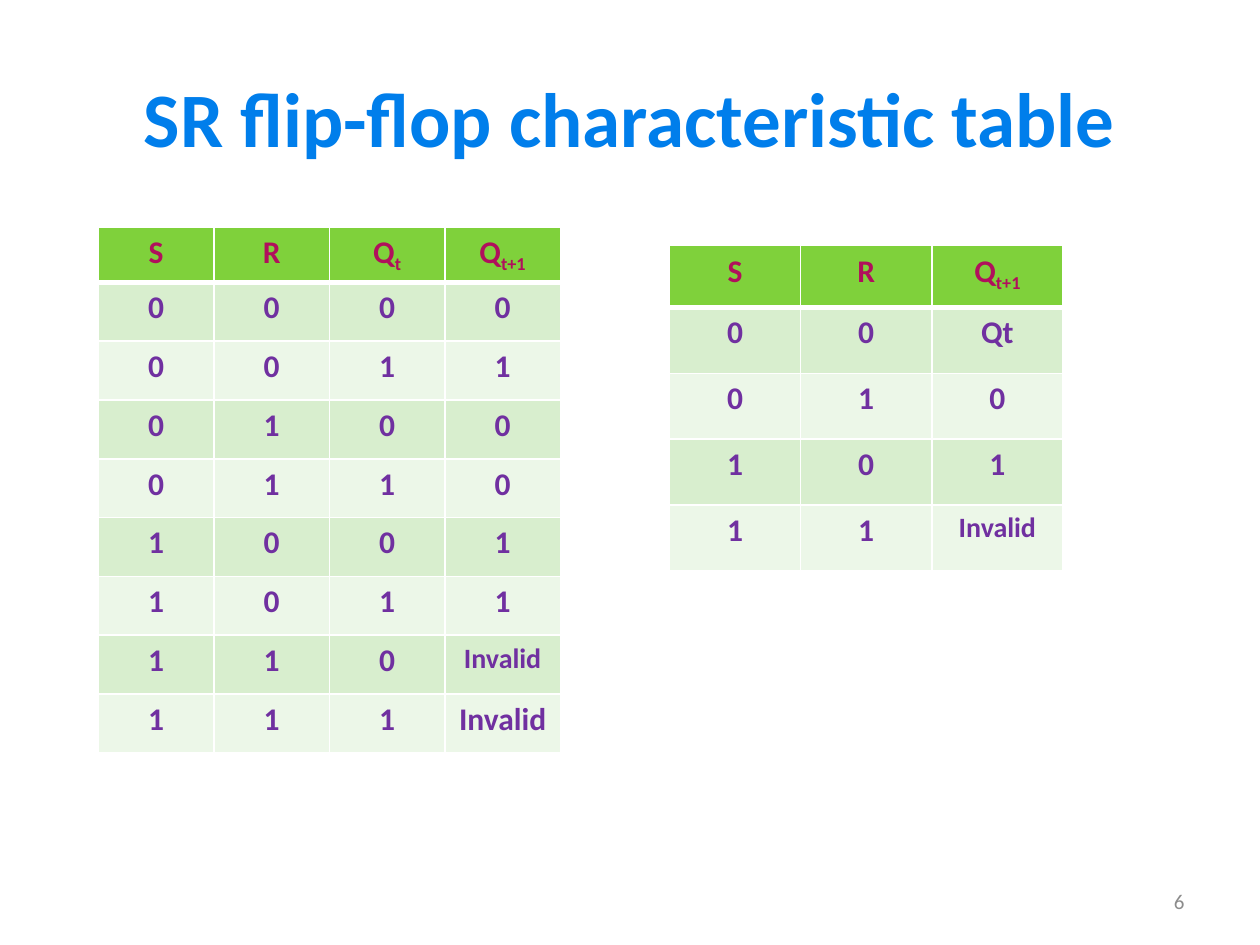
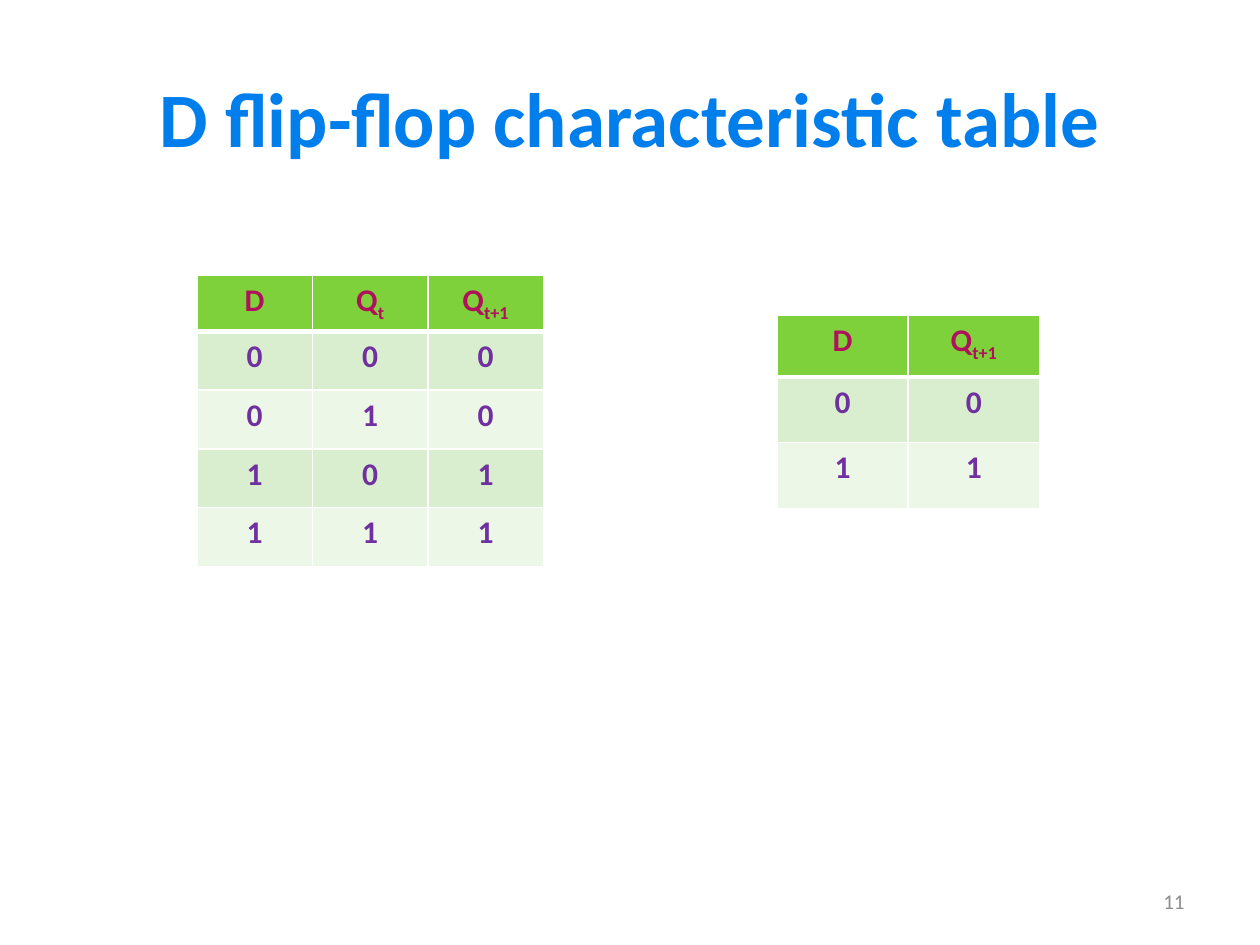
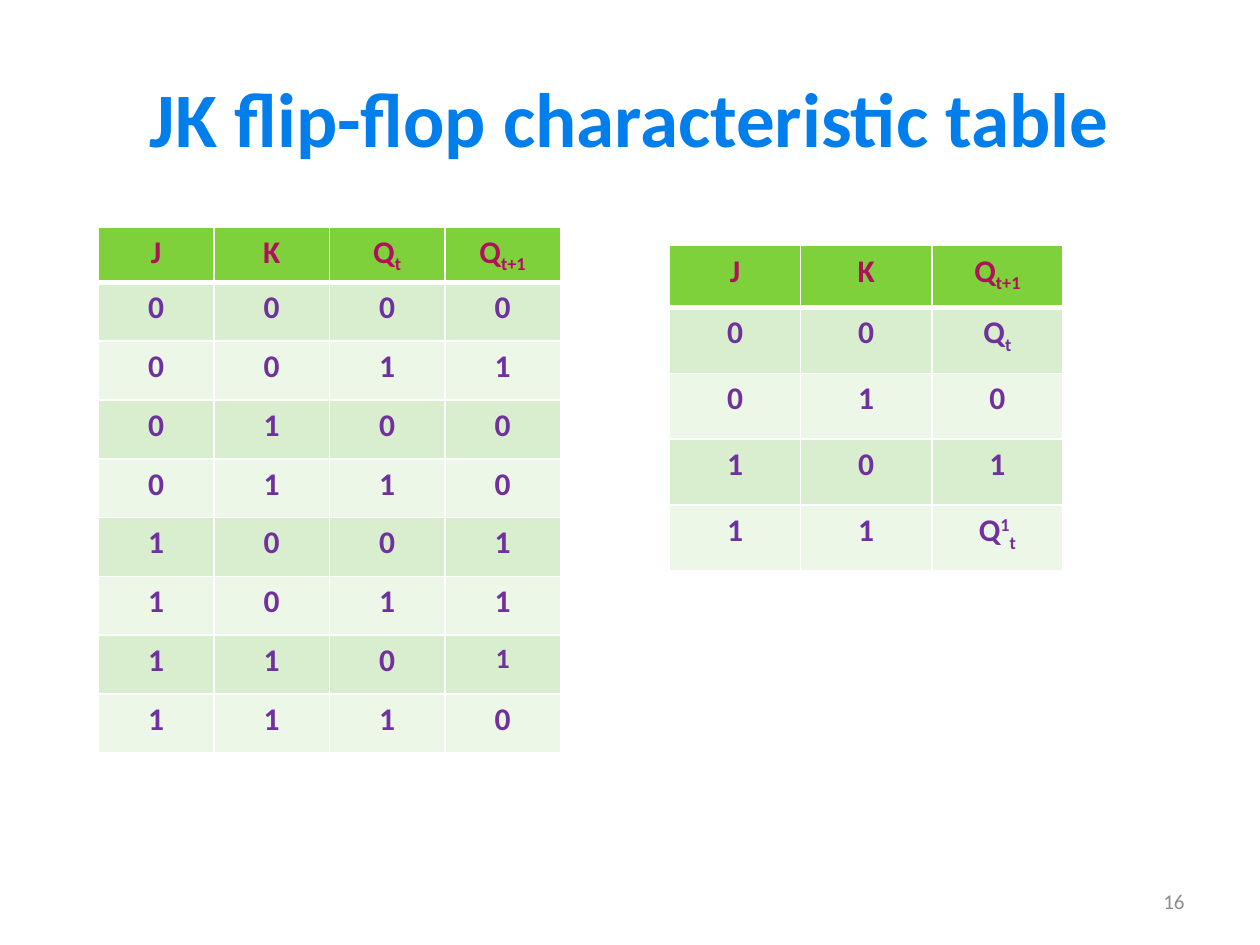
from itertools import product

from lxml.etree import SubElement
from pptx import Presentation
from pptx.dml.color import RGBColor
from pptx.enum.text import MSO_ANCHOR, PP_ALIGN
from pptx.oxml.ns import qn
from pptx.util import Pt

COLORS = {
    "title": "007EEB",
    "number": "8C8C8C",
    "header_text": "B0105C",
    "body_text": "7030A0",
    "header": "7FD13B",
    "odd_row": "D8EECE",
    "even_row": "ECF7E8",
    "border": "FFFFFF",
}
TITLE = {
    "box": (36, 21.6, 648, 90),
    "align": PP_ALIGN.CENTER,
    "color": "title",
    "font": {"size": Pt(44), "bold": True},
}
NUMBER = {
    "box": (516, 500.5, 168, 28.75),
    "align": PP_ALIGN.RIGHT,
    "color": "number",
    "font": {"size": Pt(12), "bold": False},
}
FULL_GRID = {"column": 66, "header": 24, "row": 33.6}
SHORT_GRID = {"column": 75, "header": 35.4, "row": 37.6}
BASELINES = {"_": "-25000", "^": "30000"}

FLIP_FLOPS = [
    {
        "title": "SR flip-flop characteristic table",
        "number": "6",
        "inputs": ["S", "R"],
        "full": {
            "at": (56.25, 129.6),
            "next": ["0", "1", "0", "0", "1", "1", "Invalid", "Invalid"],
            "small_row": 7,
        },
        "short": {
            "at": (382.5, 140.4),
            "next": ["Qt", "0", "1", "Invalid"],
            "small_row": 4,
        },
    },
    {
        "title": "D flip-flop characteristic table",
        "number": "11",
        "inputs": ["D"],
        "full": {"at": (112.5, 157.5), "next": ["0", "0", "1", "1"]},
        "short": {"at": (444, 180), "next": ["0", "1"]},
    },
    {
        "title": "JK flip-flop characteristic table",
        "number": "16",
        "inputs": ["J", "K"],
        "full": {
            "at": (56.25, 129.6),
            "next": ["0", "1", "0", "0", "1", "1", "1", "0"],
            "small_row": 7,
        },
        "short": {"at": (382.5, 140.4), "next": ["Q_t", "0", "1", "Q^1_t"]},
    },
]


def color(name):
    return RGBColor.from_string(COLORS[name])


def split_runs(text):
    runs = [["", None]]
    for character in text:
        if character in BASELINES:
            runs.append(["", BASELINES[character]])
        else:
            runs[-1][0] += character
    return runs


def write_text(paragraph, text, align, color_name, font):
    paragraph.alignment = align
    for run_text, baseline in split_runs(text):
        run = paragraph.add_run()
        run.text = run_text
        for name, value in {"name": "Calibri", **font}.items():
            setattr(run.font, name, value)
        run.font.color.rgb = color(color_name)
        if baseline:
            run._r.get_or_add_rPr().set("baseline", baseline)


def add_text(slide, text, style):
    box = slide.shapes.add_textbox(*map(Pt, style["box"]))
    box.text_frame.word_wrap = True
    box.text_frame.vertical_anchor = MSO_ANCHOR.MIDDLE
    write_text(box.text_frame.paragraphs[0], text, style["align"], style["color"], style["font"])


def set_borders(cell, row_index):
    widths = {
        "a:lnL": 1,
        "a:lnR": 1,
        "a:lnT": 3 if row_index == 1 else 1,
        "a:lnB": 3 if row_index == 0 else 1,
    }
    properties = cell._tc.get_or_add_tcPr()
    for position, (tag, width) in enumerate(widths.items()):
        line = SubElement(properties, qn(tag), w=str(Pt(width)))
        fill = SubElement(line, qn("a:solidFill"))
        SubElement(fill, qn("a:srgbClr"), val=COLORS["border"])
        properties.insert(position, line)


def format_cell(cell, text, row_index, size):
    is_header = row_index == 0
    band = "header" if is_header else "odd_row" if row_index % 2 else "even_row"
    cell.fill.solid()
    cell.fill.fore_color.rgb = color(band)
    set_borders(cell, row_index)
    write_text(
        cell.text_frame.paragraphs[0],
        text,
        PP_ALIGN.CENTER,
        "header_text" if is_header else "body_text",
        {"size": Pt(size), "bold": True},
    )


def add_truth_table(slide, inputs, details, grid):
    states = product("01", repeat=len(inputs))
    rows = [[*inputs, "Q_t+1"]]
    rows += [[*state, following] for state, following in zip(states, details["next"])]
    column_count = len(rows[0])
    width = column_count * grid["column"]
    height = grid["header"] + len(details["next"]) * grid["row"]
    frame = slide.shapes.add_table(
        len(rows), column_count, *map(Pt, (*details["at"], width, height))
    )
    table = frame.table
    for column in table.columns:
        column.width = Pt(grid["column"])
    for row_index, values in enumerate(rows):
        table.rows[row_index].height = Pt(grid["row"] if row_index else grid["header"])
        for column_index, text in enumerate(values):
            is_small = row_index == details.get("small_row") and column_index == len(inputs)
            format_cell(
                table.cell(row_index, column_index), text, row_index, 16 if is_small else 18
            )


def add_flip_flop_slide(presentation, flip_flop):
    slide = presentation.slides.add_slide(presentation.slide_layouts[6])
    inputs = flip_flop["inputs"]
    add_text(slide, flip_flop["title"], TITLE)
    add_truth_table(slide, [*inputs, "Q_t"], flip_flop["full"], FULL_GRID)
    add_text(slide, flip_flop["number"], NUMBER)
    add_truth_table(slide, inputs, flip_flop["short"], SHORT_GRID)


def main():
    presentation = Presentation()
    presentation.slide_width = Pt(720)
    presentation.slide_height = Pt(540)
    for flip_flop in FLIP_FLOPS:
        add_flip_flop_slide(presentation, flip_flop)
    presentation.save("out.pptx")


if __name__ == "__main__":
    main()
